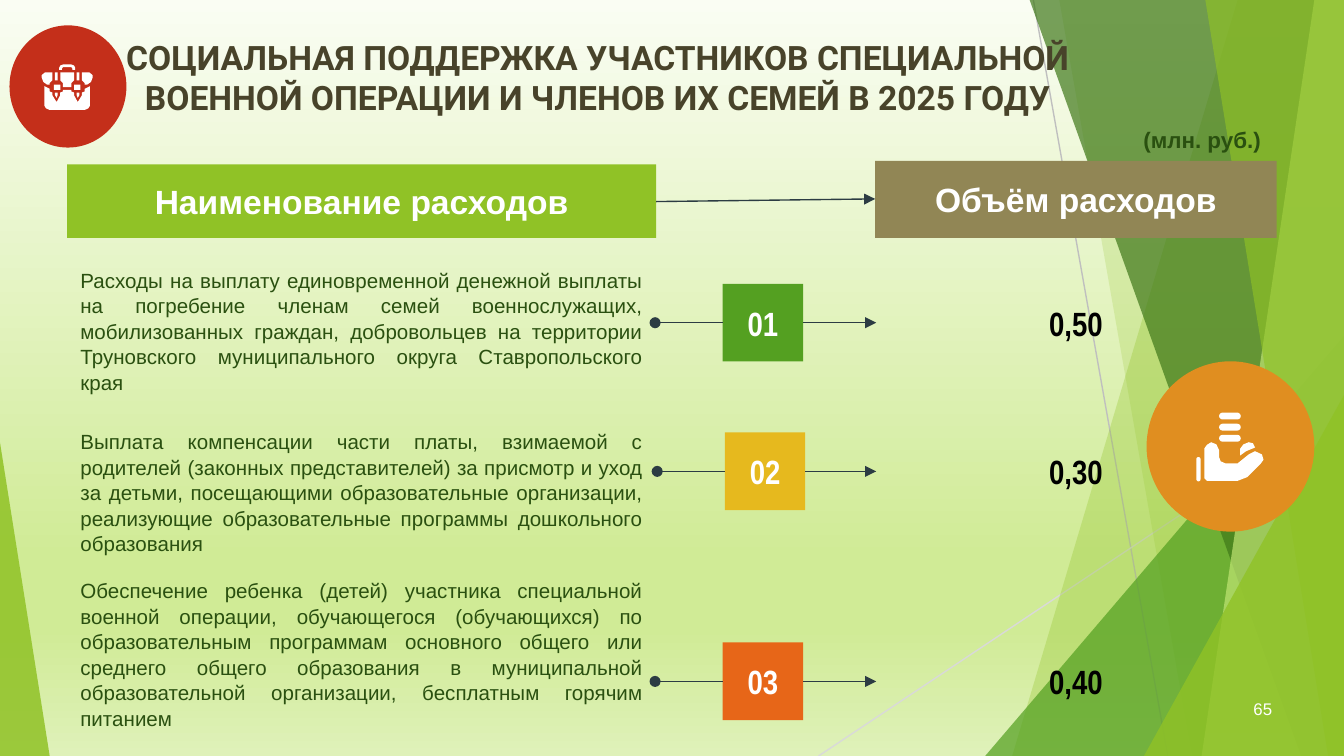
from lxml.etree import SubElement
from pptx import Presentation
from pptx.dml.color import RGBColor
from pptx.enum.shapes import MSO_CONNECTOR as Link, MSO_SHAPE as Preset
from pptx.enum.text import MSO_ANCHOR as Anchor, PP_ALIGN as Align
from pptx.oxml.ns import qn
from pptx.util import Cm, Pt

WIDTH, HEIGHT = 25.4, 14.29
WHITE, LIME, GREEN, DARK_GREEN, INK = "FFFFFF", "90C226", "54A021", "2A5010", "2C3C43"

# centre of the row, badge shift, badge colour, centre and height of the text, amount, text
ROWS = [
    (6.1, 0, GREEN, 6.25, 2.03, "0,50",
     "Расходы на выплату единовременной денежной выплаты на погребение членам семей "
     "военнослужащих, мобилизованных граждан, добровольцев на территории Труновского "
     "муниципального округа Ставропольского края"),
    (8.91, 0.04, "E6B91E", 9.3, 1.98, "0,30",
     "Выплата компенсации части платы, взимаемой с родителей (законных представителей) "
     "за присмотр и уход за детьми, посещающими образовательные организации, реализующие "
     "образовательные программы дошкольного образования"),
    (12.88, 0, "E76618", 12.36, 2.21, "0,40",
     "Обеспечение ребенка (детей) участника специальной военной операции, обучающегося "
     "(обучающихся) по образовательным программам основного общего или среднего общего "
     "образования в муниципальной образовательной организации, бесплатным горячим питанием"),
]


def color(value):
    return RGBColor.from_string(value)


def paint(shape, fill, opacity=100):
    shape.shadow.inherit = False
    shape.line.fill.background()
    shape.fill.solid()
    shape.fill.fore_color.rgb = color(fill)
    if opacity < 100:
        srgb = shape.element.spPr.find(".//" + qn("a:srgbClr"))
        SubElement(srgb, qn("a:alpha"), val=str(opacity * 1000))
    return shape


def add_preset(page, preset, left, top, width, height, fill, opacity=100):
    shape = page.shapes.add_shape(preset, Cm(left), Cm(top), Cm(width), Cm(height))
    return paint(shape, fill, opacity)


def add_triangle(page, left, top, width, apex, fill, opacity):
    """Triangle standing on the bottom edge of the page."""
    shape = add_preset(page, Preset.ISOSCELES_TRIANGLE, left, top, width, HEIGHT - top,
                       fill, opacity)
    shape.adjustments[0] = apex


def add_polygon(page, contours, fill, opacity=100):
    contours = [[(Cm(x), Cm(y)) for x, y in contour] for contour in contours]
    builder = page.shapes.build_freeform(*contours[0][0])
    for index, contour in enumerate(contours):
        if index:
            builder.move_to(*contour[0])
        builder.add_line_segments(contour[1:], close=True)
    paint(builder.convert_to_shape(), fill, opacity)


def add_line(page, start, end, stroke, end_mark=None, mark=None):
    line = page.shapes.add_connector(Link.STRAIGHT, *(Cm(n) for n in start + end))
    line.line.color.rgb = color(stroke)
    line.line.width = Pt(0.75)
    properties = line.element.spPr
    if mark:
        SubElement(properties.find(qn("a:ln")), qn(end_mark), type=mark)
    SubElement(properties, qn("a:effectLst"))


def write(shape, text, size, fill, font="Arial", bold=False, align=Align.CENTER):
    """Put centred-height text with even margins into a shape."""
    frame = shape.text_frame
    frame.word_wrap = True
    frame.vertical_anchor = Anchor.MIDDLE
    frame.margin_left = frame.margin_right = Cm(0.25)
    frame.margin_top = frame.margin_bottom = Cm(0.25)
    para = frame.paragraphs[0]
    para.text = text
    para.alignment = align
    para.font.name = font
    para.font.size = Pt(size)
    para.font.bold = bold
    para.font.color.rgb = color(fill)
    return frame


def add_text(page, left, top, width, height, *args, **options):
    box = page.shapes.add_textbox(Cm(left), Cm(top), Cm(width), Cm(height))
    return write(box, *args, **options)


def add_label(page, left, top, width, height, text):
    """Small text at the top left of its box."""
    size, fill, bold = (12, DARK_GREEN, True) if text.startswith("(") else (9, WHITE, False)
    frame = add_text(page, left, top, width, height, text, size, fill,
                     bold=bold, align=Align.LEFT)
    frame.vertical_anchor = Anchor.TOP
    frame.margin_top = frame.margin_bottom = Cm(0.13)
    frame.word_wrap = False


def set_background(page):
    fill = page.background.fill
    fill.gradient()
    fill.gradient_angle = 270
    stops = page.element.find(".//" + qn("a:gsLst"))
    for stop in list(stops):
        stops.remove(stop)
    for place, value in ((0, "FAFDF3"), (74, "D0EB96"), (83, "D0EB96"), (100, "DFF1B9")):
        stop = SubElement(stops, qn("a:gs"), pos=str(place * 1000))
        SubElement(stop, qn("a:srgbClr"), val=value)


def add_facets(page):
    def add_band(top, bottom, fill, opacity):
        """Band from a slanted left side to the right edge of the page."""
        corners = [(top, 0), (WIDTH, 0), (WIDTH, HEIGHT), (bottom, HEIGHT)]
        add_polygon(page, [corners], fill, opacity)

    add_line(page, (19.53, 0), (22.07, HEIGHT), "BFBFBF")
    add_line(page, (WIDTH, 7.67), (15.47, HEIGHT), "D9D9D9")
    add_band(23.39, 19.13, LIME, 30)
    add_band(20.02, 22.53, LIME, 20)
    add_triangle(page, 18.62, 6.35, 6.78, 1, GREEN, 72)
    add_band(19.46, 24.59, "3F7819", 70)
    add_band(24.84, 22.71, "C0E474", 70)
    add_band(22.78, 25.1, LIME, 65)
    add_triangle(page, 21.62, 7.47, 3.78, 1, LIME, 80)
    add_triangle(page, 0, 8.36, 0.94, 0, LIME, 85)


def add_hand_icon(page):
    add_preset(page, Preset.OVAL, 21.67, 6.83, 3.17, 3.22, "E08E20")
    thumb = [(23.6, 8.36), (23.5, 8.4), (23.44, 8.48), (23.44, 8.61), (23.55, 8.53),
             (23.72, 8.46), (23.68, 8.38)]
    palm = [(22.89, 8.36), (22.81, 8.41), (22.76, 8.48), (22.76, 9.04), (22.81, 9.09),
            (23.39, 9.09), (23.57, 9.02), (23.83, 8.76), (23.88, 8.69), (23.85, 8.59),
            (23.72, 8.53), (23.6, 8.59), (23.39, 8.76), (23.16, 8.76), (23.07, 8.72),
            (23.04, 8.64), (23.04, 8.51), (22.99, 8.4)]
    for outline in (thumb, palm):
        add_polygon(page, [outline], WHITE)
    coins = [(23.04, 7.8 + 0.21 * n, 0.41, 0.13) for n in range(3)]
    for place in coins + [(22.61, 8.64, 0.08, 0.46)]:
        add_preset(page, Preset.ROUNDED_RECTANGLE, *place, WHITE).adjustments[0] = 0.5


def mirror(points):
    """Reflect points in the upright axis of the bag."""
    return [(2.54 - x, y) for x, y in reversed(points)]


def add_bag_icon(page):
    add_preset(page, Preset.OVAL, 0.18, 0.48, 2.21, 2.31, "C42F1A")
    body = [(1.19, 1.7), (1.19, 1.73), (1.14, 1.75), (1.14, 1.8), (1.07, 1.93), (0.99, 1.8),
            (0.99, 1.75), (0.94, 1.73), (0.94, 1.68), (0.84, 1.63), (0.84, 2.0),
            (0.87, 2.05), (0.94, 2.08)]
    panel = [(1.14, 1.37), (1.14, 1.52), (1.19, 1.57), (1.19, 1.65)]
    handle = [(1.19, 1.27), (1.17, 1.3), (1.17, 1.32), (1.12, 1.32), (1.12, 1.28),
              (1.14, 1.24), (1.19, 1.22)]
    for half in (body, panel, handle):
        add_polygon(page, [half + mirror(half)], WHITE)
    flap = [(0.85, 1.37), (0.79, 1.42), (0.79, 1.47), (0.82, 1.55), (0.89, 1.6),
            (0.94, 1.6), (0.94, 1.57), (0.99, 1.52), (0.99, 1.37)]
    strap = [[(1.04, 1.37), (1.04, 1.52), (1.09, 1.52), (1.09, 1.37)],
             [(1.02, 1.6), (1.02, 1.7), (1.14, 1.7), (1.14, 1.6)],
             [(1.04, 1.75), (1.04, 1.8), (1.07, 1.85), (1.09, 1.8), (1.09, 1.75)]]
    for contours in ([flap], strap):
        add_polygon(page, contours, WHITE)
        add_polygon(page, [mirror(contour) for contour in contours], WHITE)


def add_header(page, left, top, width, height, fill, text):
    bar = add_preset(page, Preset.RECTANGLE, left, top, width, height, fill)
    write(bar, text, 18, WHITE, bold=True)


def add_row(page, number, middle, shift, fill, text_middle, text_height, amount, text):
    badge_left, badge_width, badge_height = 13.66 + shift, 1.52, 1.47
    badge = add_preset(page, Preset.RECTANGLE, badge_left, middle - badge_height / 2,
                       badge_width, badge_height, fill)
    write(badge, f"{number:02}", 18, WHITE, "Arial Narrow", bold=True)
    frame = add_text(page, 1.27, text_middle - text_height / 2, 11.13, text_height,
                     text, 11, DARK_GREEN, align=Align.JUSTIFY)
    frame.paragraphs[0].line_spacing = 1.04
    add_text(page, 16.54, middle - 0.38, 7.59, 0.76, amount, 18, "000000",
             "Arial Narrow", bold=True)
    add_line(page, (12.38 + shift, middle), (badge_left, middle), INK, "a:headEnd", "oval")
    add_line(page, (badge_left + badge_width, middle), (16.56, middle), INK,
             "a:tailEnd", "triangle")


def main():
    deck = Presentation()
    deck.slide_width, deck.slide_height = Cm(WIDTH), Cm(HEIGHT)
    page = deck.slides.add_slide(deck.slide_layouts[6])
    set_background(page)
    add_facets(page)
    add_text(page, 1.8, 0.94, 19, 1.04,
             "СОЦИАЛЬНАЯ ПОДДЕРЖКА УЧАСТНИКОВ СПЕЦИАЛЬНОЙ ВОЕННОЙ ОПЕРАЦИИ "
             "И ЧЛЕНОВ ИХ СЕМЕЙ В 2025 ГОДУ", 18, "48432A", "Roboto", bold=True)
    add_header(page, 1.27, 3.11, 11.13, 1.39, LIME, "Наименование расходов")
    add_header(page, 16.54, 3.04, 7.59, 1.46, "918655", "Объём расходов")
    add_line(page, (12.4, 3.81), (16.54, 3.76), INK, "a:tailEnd", "triangle")
    for number, row in enumerate(ROWS, 1):
        add_row(page, number, *row)
    add_label(page, 21.36, 2.26, 2.77, 0.76, "(млн. руб.)")
    add_hand_icon(page)
    add_label(page, 23.44, 13.08, 1.42, 0.76, "65")
    add_bag_icon(page)
    deck.save("out.pptx")


if __name__ == "__main__":
    main()
